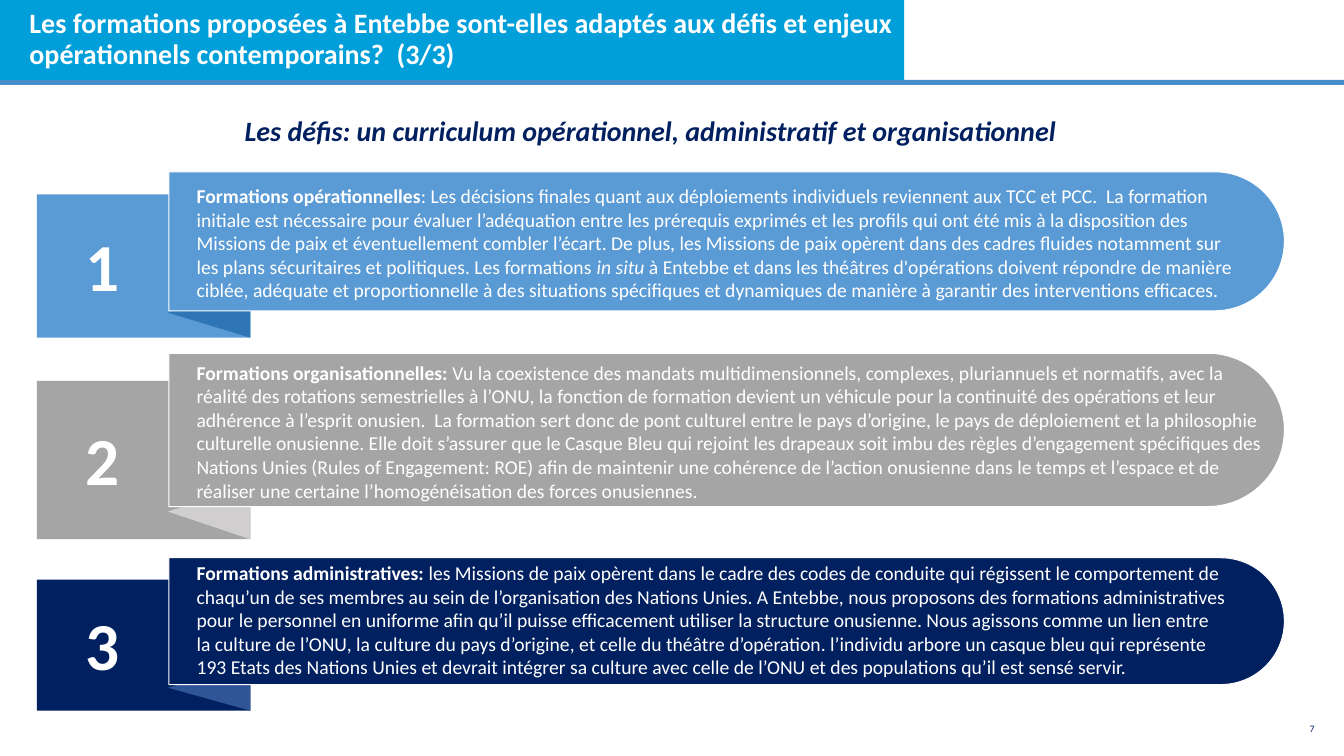
from dataclasses import dataclass

import pptx
import pptx.dml.color
import pptx.enum.shapes
import pptx.enum.text
import pptx.util

RGBColor = pptx.dml.color.RGBColor
SHAPE = pptx.enum.shapes.MSO_SHAPE
ANCHOR = pptx.enum.text.MSO_ANCHOR
ALIGN = pptx.enum.text.PP_ALIGN

WHITE = RGBColor(0xFF, 0xFF, 0xFF)
NAVY = RGBColor(0x00, 0x20, 0x60)
CYAN = RGBColor(0x00, 0x9F, 0xDA)
STRIPE_BLUE = RGBColor(0x46, 0x8C, 0xC8)
SKY = RGBColor(0x5B, 0x9B, 0xD5)
DEEP_SKY = RGBColor(0x2E, 0x75, 0xB6)
GREY = RGBColor(0xA5, 0xA5, 0xA5)
PALE_GREY = RGBColor(0xD0, 0xCE, 0xCE)
STEEL = RGBColor(0x2F, 0x55, 0x97)

FONT = "Calibri"
SLIDE_WIDTH, SLIDE_HEIGHT = pptx.util.Inches(13.33), pptx.util.Inches(7.5)

# The slide is a grid of 160 columns by 90 rows
COLUMN, ROW = SLIDE_WIDTH / 160, SLIDE_HEIGHT / 90
TAB_LEFT, TAB_WIDTH = 4.4, 25.4
BAND_LEFT, BAND_WIDTH = 20.1, 132.8
DIGIT_LEFT, DIGIT_WIDTH = 5.6, 13.3
TEXT_LEFT = 23.4
FOLD_WIDTH = 9.8
FOLD_SHARE = 0.35  # share of the tab's height
DIGIT_INSET, DIGIT_SHARE = 0.14, 0.7


@dataclass
class Box:
    left: float
    top: float
    width: float
    height: float

    def emu(self) -> list[int]:
        return [round(self.left * COLUMN), round(self.top * ROW),
                round(self.width * COLUMN), round(self.height * ROW)]


@dataclass
class Span:
    text: str
    bold: bool = False
    italic: bool = False


@dataclass
class Challenge:
    number: str
    color: RGBColor
    fold_color: RGBColor
    band_top: float
    band_height: float
    tab_top: float
    tab_height: float
    text: Box
    anchor: ANCHOR
    spans: list[Span]


CHALLENGES = [
    Challenge("1", SKY, DEEP_SKY, 20.45, 16.55, 23.15, 17.05,
              Box(TEXT_LEFT, 21.85, 125.3, 14.15), ANCHOR.MIDDLE, [
        Span("Formations opérationnelles", bold=True),
        Span(": Les décisions finales quant aux déploiements individuels reviennent aux TCC et "
             "PCC.  La formation initiale est nécessaire pour évaluer l’adéquation entre les "
             "prérequis exprimés et les profils qui ont été mis à la disposition des Missions de "
             "paix et éventuellement combler l’écart. De plus, les Missions de paix opèrent dans "
             "des cadres fluides notamment sur les plans sécuritaires et politiques. Les "
             "formations "),
        Span("in situ ", italic=True),
        Span("à Entebbe et dans les théâtres d'opérations doivent répondre de manière ciblée, "
             "adéquate et proportionnelle à des situations spécifiques et dynamiques de manière "
             "à garantir des interventions efficaces."),
    ]),
    Challenge("2", GREY, PALE_GREY, 42.05, 18.25, 45.35, 18.85,
              Box(TEXT_LEFT, 42.95, 127.1, 16.9), ANCHOR.TOP, [
        Span("Formations organisationnelles: ", bold=True),
        Span("Vu la coexistence des mandats multidimensionnels, complexes, pluriannuels et "
             "normatifs, avec la réalité des rotations semestrielles à l’ONU, la fonction de "
             "formation devient un véhicule pour la continuité des opérations et leur adhérence "
             "à l’esprit onusien.  La formation sert donc de pont culturel entre le pays "
             "d’origine, le pays de déploiement et la philosophie culturelle onusienne. Elle doit "
             "s’assurer que le Casque Bleu qui rejoint les drapeaux soit imbu des règles "
             "d’engagement spécifiques des Nations Unies (Rules of Engagement: ROE) afin de "
             "maintenir une cohérence de l’action onusienne dans le temps et l’espace et de "
             "réaliser une certaine l’homogénéisation des forces onusiennes."),
    ]),
    Challenge("3", NAVY, STEEL, 66.4, 15.1, 69, 15.6,
              Box(TEXT_LEFT, 66.7, 122.9, 14.15), ANCHOR.MIDDLE, [
        Span("Formations administratives: ", bold=True),
        Span("les Missions de paix opèrent dans le cadre des codes de conduite qui régissent le "
             "comportement de chaqu’un de ses membres au sein de l’organisation des Nations "
             "Unies. A Entebbe, nous proposons des formations administratives pour le personnel "
             "en uniforme afin qu’il puisse efficacement utiliser la structure onusienne. Nous "
             "agissons comme un lien entre la culture de l’ONU, la culture du pays d’origine, et "
             "celle du théâtre d’opération. l’individu arbore un casque bleu qui représente 193 "
             "Etats des Nations Unies et devrait intégrer sa culture avec celle de l’ONU et des "
             "populations qu’il est sensé servir."),
    ]),
]


def add_block(slide, kind: SHAPE, box: Box, color: RGBColor, rotation: int = 0):
    """Fill the given visible box; a quarter turn swaps the shape's sides."""
    left, top, width, height = box.emu()
    if rotation:
        left, top = left + (width - height) // 2, top + (height - width) // 2
        width, height = height, width
    block = slide.shapes.add_shape(kind, left, top, width, height)
    block.rotation = rotation
    block.shadow.inherit = False
    block.fill.solid()
    block.fill.fore_color.rgb = color
    block.line.fill.background()
    return block


def write(frame, spans: list[Span], size: float, color: RGBColor,
          align: ALIGN = ALIGN.LEFT, anchor: ANCHOR = ANCHOR.MIDDLE) -> None:
    frame.word_wrap = True
    frame.auto_size = pptx.enum.text.MSO_AUTO_SIZE.NONE
    frame.vertical_anchor = anchor
    frame.margin_left = frame.margin_right = frame.margin_top = frame.margin_bottom = 0
    paragraph = frame.paragraphs[0]
    paragraph.alignment = align
    for span in spans:
        run = paragraph.add_run()
        run.text = span.text
        run.font.name = FONT
        run.font.size = pptx.util.Pt(size)
        run.font.color.rgb = color
        run.font.bold, run.font.italic = span.bold, span.italic


def add_label(slide, box: Box, spans: list[Span], size: float, color: RGBColor,
              align: ALIGN = ALIGN.LEFT, anchor: ANCHOR = ANCHOR.MIDDLE) -> None:
    label = slide.shapes.add_textbox(*box.emu())
    write(label.text_frame, spans, size, color, align, anchor)


def add_header(slide) -> None:
    add_block(slide, SHAPE.RECTANGLE, Box(0, 0, 107.65, 9.6), CYAN)
    add_block(slide, SHAPE.RECTANGLE, Box(0, 9.5, 160, 0.6), STRIPE_BLUE)
    title = slide.shapes.title
    title.left, title.top, title.width, title.height = Box(3.5, 0.85, 117, 7.8).emu()
    write(title.text_frame, [Span(
        "Les formations proposées à Entebbe sont-elles adaptés aux défis et enjeux "
        "opérationnels contemporains?  (3/3)", bold=True)], 20, WHITE)
    title.text_frame.margin_right = pptx.util.Inches(0.05)
    title.text_frame.paragraphs[0].line_spacing = 0.9
    # Bring the title in front of its banner
    title.element.getparent().append(title.element)


def add_challenge(slide, item: Challenge) -> None:
    # Numbered tab with its folded corner
    add_block(slide, SHAPE.RECTANGLE,
              Box(TAB_LEFT, item.tab_top, TAB_WIDTH, item.tab_height), item.color)
    fold_height = FOLD_SHARE * item.tab_height
    add_block(slide, SHAPE.ISOSCELES_TRIANGLE,
              Box(TAB_LEFT + TAB_WIDTH - FOLD_WIDTH,
                  item.tab_top + item.tab_height - fold_height, FOLD_WIDTH, fold_height),
              item.fold_color, rotation=270)
    # Band rounded on its right end
    band = add_block(slide, SHAPE.ROUND_2_SAME_RECTANGLE,
                     Box(BAND_LEFT, item.band_top, BAND_WIDTH, item.band_height),
                     item.color, rotation=90)
    band.adjustments[0], band.adjustments[1] = 0.5, 0
    band.line.color.rgb = WHITE
    band.line.width = pptx.util.Pt(0.75)
    # Number and description
    digit = Box(DIGIT_LEFT, item.tab_top + DIGIT_INSET * item.tab_height,
                DIGIT_WIDTH, DIGIT_SHARE * item.tab_height)
    add_label(slide, digit, [Span(item.number, bold=True)], 48, WHITE, ALIGN.CENTER)
    add_label(slide, item.text, item.spans, 14, WHITE, anchor=item.anchor)


def main() -> None:
    deck = pptx.Presentation()
    deck.slide_width, deck.slide_height = SLIDE_WIDTH, SLIDE_HEIGHT
    slide = deck.slides.add_slide(deck.slide_layouts.get_by_name("Title Only"))
    add_label(slide, Box(153, 85.2, 3.5, 3), [Span("7")], 7, NAVY, ALIGN.RIGHT)
    add_header(slide)
    add_label(slide, Box(8.65, 12.85, 137.6, 5.3), [Span(
        "Les défis: un curriculum opérationnel, administratif et organisationnel",
        bold=True, italic=True)], 20, NAVY, ALIGN.CENTER)
    for item in CHALLENGES:
        add_challenge(slide, item)
    deck.save("out.pptx")


if __name__ == "__main__":
    main()
